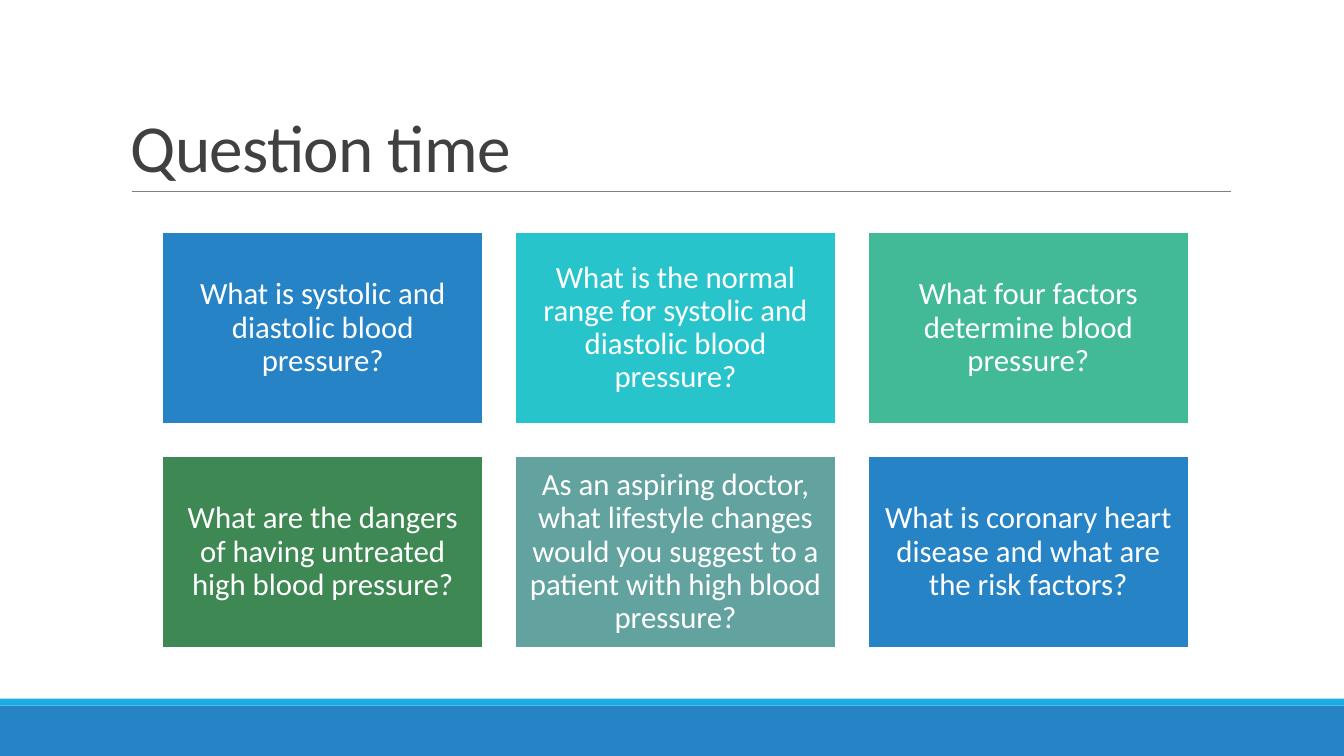
from dataclasses import dataclass

from lxml.etree import SubElement
from pptx import Presentation
from pptx.dml.color import RGBColor
from pptx.enum.shapes import MSO_CONNECTOR as Connector, MSO_SHAPE as Shape
from pptx.enum.text import MSO_ANCHOR as Anchor, PP_ALIGN as Align
from pptx.oxml.ns import qn
from pptx.util import Pt


@dataclass(frozen=True)
class Theme:
    font: str = "Calibri"
    title_size: int = 48
    tile_size: int = 22
    title_color: str = "404040"
    rule_color: str = "808080"
    white: str = "FFFFFF"
    blue: str = "2683C6"
    sky: str = "1CADE4"
    turquoise: str = "28C4CC"
    mint: str = "42BA97"
    green: str = "3E8853"
    sage: str = "62A39F"


THEME = Theme()
SLIDE_WIDTH, SLIDE_HEIGHT = 960, 540
COLUMNS = 3
TILE_LEFT, TILE_TOP = 116, 165.6
TILE_WIDTH, TILE_HEIGHT = 229, 137.5
COLUMN_STEP, ROW_STEP = 252, 160
TILE_INSET = 6.6

QUESTIONS = [
    ("What is systolic and diastolic blood pressure?", THEME.blue),
    ("What is the normal range for systolic and diastolic blood pressure?", THEME.turquoise),
    ("What four factors determine blood pressure?", THEME.mint),
    ("What are the dangers of having untreated high blood pressure?", THEME.green),
    ("As an aspiring doctor, what lifestyle changes would you suggest "
     "to a patient with high blood pressure?", THEME.sage),
    ("What is coronary heart disease and what are the risk factors?", THEME.blue),
]


def apply_format(target, values):
    for name, value in values.items():
        setattr(target, name, value)


class SlideBuilder:
    def __init__(self, slide, theme):
        self.slide = slide
        self.theme = theme

    def add_text(self, shape, text, size, color, frame_format, paragraph_format):
        """Fill a shape with one formatted paragraph and return its run."""
        frame = shape.text_frame
        apply_format(frame, {"word_wrap": True, **frame_format})
        paragraph = frame.paragraphs[0]
        apply_format(paragraph, paragraph_format)
        run = paragraph.add_run()
        run.text = text
        apply_format(run.font, {"name": self.theme.font, "size": Pt(size)})
        run.font.color.rgb = RGBColor.from_string(color)
        return run

    def rectangle(self, left, top, width, height, color):
        shape = self.slide.shapes.add_shape(
            Shape.RECTANGLE, Pt(left), Pt(top), Pt(width), Pt(height))
        shape.shadow.inherit = False
        shape.fill.solid()
        shape.fill.fore_color.rgb = RGBColor.from_string(color)
        shape.line.fill.background()
        return shape

    def rule(self, left, right, y):
        line = self.slide.shapes.add_connector(
            Connector.STRAIGHT, Pt(left), Pt(y), Pt(right), Pt(y))
        line.line.color.rgb = RGBColor.from_string(self.theme.rule_color)
        line.line.width = Pt(0.5)
        SubElement(line._element.spPr, qn("a:effectLst"))

    def title(self, left, top, width, height, text):
        box = self.slide.shapes.add_textbox(Pt(left), Pt(top), Pt(width), Pt(height))
        run = self.add_text(box, text, self.theme.title_size, self.theme.title_color,
                            {"vertical_anchor": Anchor.BOTTOM}, {"line_spacing": 0.85})
        run._r.get_or_add_rPr().set("spc", "-50")

    def tile(self, left, top, text, color):
        shape = self.rectangle(left, top, TILE_WIDTH, TILE_HEIGHT, color)
        shape.line.color.rgb = RGBColor.from_string(self.theme.white)
        shape.line.width = Pt(1.25)
        sides = ("left", "top", "right", "bottom")
        frame_format = {f"margin_{side}": Pt(TILE_INSET) for side in sides}
        frame_format["vertical_anchor"] = Anchor.MIDDLE
        self.add_text(shape, text, self.theme.tile_size, self.theme.white, frame_format,
                      {"alignment": Align.CENTER, "line_spacing": 0.9})


def main():
    presentation = Presentation()
    apply_format(presentation, {"slide_width": Pt(SLIDE_WIDTH),
                                "slide_height": Pt(SLIDE_HEIGHT)})
    slide = presentation.slides.add_slide(presentation.slide_layouts[6])
    builder = SlideBuilder(slide, THEME)

    builder.rectangle(0, 504, SLIDE_WIDTH, 36, THEME.blue)
    builder.rectangle(0, 499, SLIDE_WIDTH, 5, THEME.sky)
    builder.rule(94, 879, 136.6)
    builder.title(86.4, 22.6, 792, 114.2, "Question time")
    for index, (question, color) in enumerate(QUESTIONS):
        row, column = divmod(index, COLUMNS)
        builder.tile(TILE_LEFT + column * COLUMN_STEP, TILE_TOP + row * ROW_STEP,
                     question, color)

    presentation.save("out.pptx")


if __name__ == "__main__":
    main()
